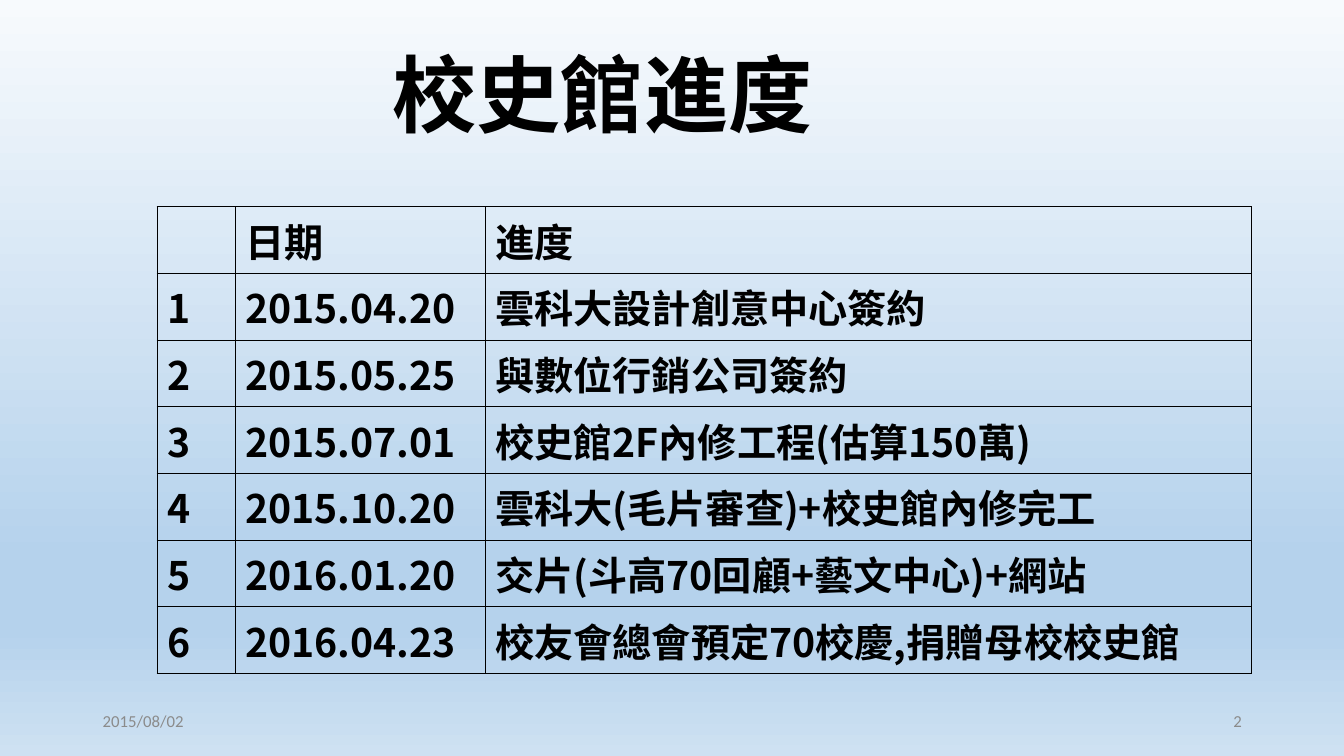
"""Build the progress slide of the school history museum."""
from lxml.etree import SubElement
from pptx import Presentation
from pptx.dml.color import RGBColor
from pptx.enum.text import MSO_ANCHOR, MSO_AUTO_SIZE, PP_ALIGN
from pptx.oxml.ns import qn
from pptx.util import Cm, Pt

TITLE = "校史館進度"
ROWS = [
    ("", "日期", "進度"),
    ("1", "2015.04.20", "雲科大設計創意中心簽約"),
    ("2", "2015.05.25", "與數位行銷公司簽約"),
    ("3", "2015.07.01", "校史館2F內修工程(估算150萬)"),
    ("4", "2015.10.20", "雲科大(毛片審查)+校史館內修完工"),
    ("5", "2016.01.20", "交片(斗高70回顧+藝文中心)+網站"),
    ("6", "2016.04.23", "校友會總會預定70校慶,捐贈母校校史館"),
]
FOOTERS = [
    ("2015/08/02", 2.34, PP_ALIGN.LEFT),
    ("2", 23.93, PP_ALIGN.RIGHT),
]
COLORS = {"text": "000000", "footer": "8B8B8B",
          "sky": "F7FAFD", "blue": "B5D2EC", "haze": "CEE1F2"}
GRADIENT = [(0, "sky"), (74, "blue"), (83, "blue"), (100, "haze")]
FONT, FOOTER_FONT = "Noto Sans CJK SC", "Calibri"
COLUMN_WIDTHS = (1.97, 6.3, 19.3)
ROW_HEIGHT = 1.68


def add_span(para, text, size, font, color, bold=False):
    """Add one formatted run to a paragraph."""
    span = para.add_run()
    span.text = text
    span.font.size = Pt(size)
    span.font.bold = bold
    span.font.name = font
    span.font.color.rgb = RGBColor.from_string(COLORS[color])
    SubElement(span.font._element, qn("a:ea"), typeface=font)


def paint_background(page):
    """Fill the page with a vertical gradient."""
    fill = page.background.fill
    fill.gradient()
    fill.gradient_angle = 270
    stops = next(page.element.iter(qn("a:gsLst")))
    for stop in list(stops):
        stops.remove(stop)
    for percent, color in GRADIENT:
        stop = SubElement(stops, qn("a:gs"), pos=str(percent * 1000))
        SubElement(stop, qn("a:srgbClr"), val=COLORS[color])


def add_borders(cell):
    """Draw a thin line on every side of a cell."""
    properties = cell._tc.get_or_add_tcPr()
    for index, side in enumerate(("lnL", "lnR", "lnT", "lnB")):
        line = properties.makeelement(qn(f"a:{side}"), {"w": str(Pt(1))})
        properties.insert(index, line)
        fill = SubElement(line, qn("a:solidFill"))
        SubElement(fill, qn("a:srgbClr"), val=COLORS["text"])


def add_title(page):
    """Place and format the title placeholder."""
    box = page.shapes.title
    box.left, box.top, box.width, box.height = Cm(9.63), Cm(1.24), Cm(11.2), Cm(2.8)
    frame = box.text_frame
    frame.word_wrap = False
    frame.auto_size = MSO_AUTO_SIZE.NONE
    frame.vertical_anchor = MSO_ANCHOR.TOP
    para = frame.paragraphs[0]
    para.alignment = PP_ALIGN.LEFT
    para.line_spacing = 0.9
    add_span(para, TITLE, 60, FONT, "text", True)


def add_progress_table(page):
    """Add the table of dates and milestones."""
    table = page.shapes.add_table(
        len(ROWS), len(COLUMN_WIDTHS), Cm(3.96), Cm(5.21),
        Cm(sum(COLUMN_WIDTHS)), Cm(ROW_HEIGHT * len(ROWS))).table
    table.first_row = table.horz_banding = False
    for column, width in zip(table.columns, COLUMN_WIDTHS):
        column.width = Cm(width)
    for row, texts in zip(table.rows, ROWS):
        row.height = Cm(ROW_HEIGHT)
        for cell, text in zip(row.cells, texts):
            cell.fill.background()
            add_borders(cell)
            if text:
                add_span(cell.text_frame.paragraphs[0], text, 28, FONT, "text", True)


def add_footers(page):
    """Add the date and the page number."""
    for text, left, alignment in FOOTERS:
        box = page.shapes.add_textbox(Cm(left), Cm(17.65), Cm(7.62), Cm(1.02))
        frame = box.text_frame
        frame.word_wrap = True
        frame.vertical_anchor = MSO_ANCHOR.MIDDLE
        para = frame.paragraphs[0]
        para.alignment = alignment
        add_span(para, text, 12, FOOTER_FONT, "footer")


def main():
    """Assemble and save the deck."""
    deck = Presentation()
    deck.slide_width, deck.slide_height = Cm(33.87), Cm(19.05)
    page = deck.slides.add_slide(deck.slide_layouts.get_by_name("Title Only"))
    paint_background(page)
    add_title(page)
    add_footers(page)
    add_progress_table(page)
    deck.save("out.pptx")


if __name__ == "__main__":
    main()
